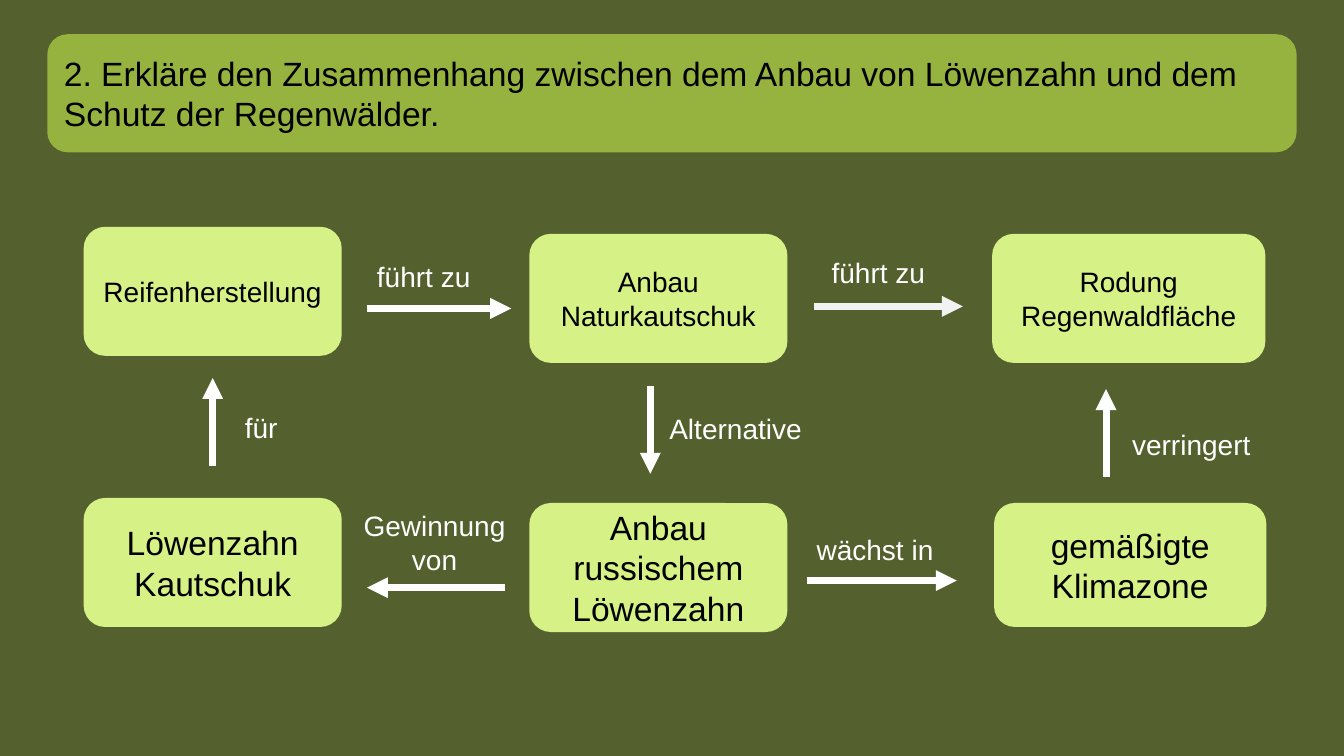
from dataclasses import dataclass

from lxml import etree
from pptx import Presentation
from pptx.dml.color import RGBColor
from pptx.enum import shapes, text
from pptx.oxml import ns
from pptx.util import Inches, Pt


@dataclass(frozen=True)
class Theme:
    background: str = "54612E"
    banner: str = "96B340"
    box: str = "D6F186"
    dark: str = "000000"
    light: str = "FFFFFF"
    pale: str = "F2F2F2"
    font: str = "Arial"
    small: int = 20
    large: int = 24
    arrow_width: float = 5
    banner_line: float = 1.5


THEME = Theme()
LEFT, CENTER = text.PP_ALIGN.LEFT, text.PP_ALIGN.CENTER


@dataclass(frozen=True)
class Box:
    words: str
    x: float
    y: float
    w: float = 2.56
    h: float = 1.28
    size: int = THEME.small
    side: float = 0.1
    fill: str = THEME.box
    align: text.PP_ALIGN = CENTER


@dataclass(frozen=True)
class Label:
    words: str
    x: float
    y: float
    w: float
    h: float = 0.44
    align: text.PP_ALIGN = LEFT


@dataclass(frozen=True)
class Arrow:
    x: float
    y: float
    dx: float = 0
    dy: float = 0
    color: str = THEME.light


COL_1, COL_2, COL_3 = 0.83, 5.25, 9.84
ROW_1, ROW_2 = 2.32, 4.99

BOXES = [
    Box("Reifenherstellung", COL_1, 2.25, side=0),
    Box("Anbau Naturkautschuk", COL_2, ROW_1),
    Box("Rodung Regenwaldfläche", COL_3, ROW_1, w=2.71),
    Box("Löwenzahn Kautschuk", COL_1, 4.94, size=THEME.large),
    Box("Anbau russischem Löwenzahn", COL_2, ROW_2, size=THEME.large, side=0),
    Box("gemäßigte Klimazone", 9.86, ROW_2, w=2.7, h=1.23, size=THEME.large),
]
BANNER = Box(
    "2. Erkläre den Zusammenhang zwischen dem Anbau von Löwenzahn "
    "und dem Schutz der Regenwälder.",
    0.48, 0.35, 12.37, 1.15, THEME.large, fill=THEME.banner, align=LEFT,
)
LABELS = [
    Label("führt zu", 3.64, 2.53, 1.22),
    Label("führt zu", 8.15, 2.49, 2.04),
    Label("für", 2.33, 4.02, 1.41),
    Label("Alternative", 6.54, 4.03, 2.04),
    Label("verringert", 11.13, 4.19, 1.54),
    Label("Gewinnung\nvon", 3.47, 5, 1.68, 0.77, CENTER),
    Label("wächst in", 8, 5.23, 1.72),
]
ARROWS = [
    Arrow(3.64, 3.06, dx=1.43),
    Arrow(8.07, 3.04, dx=1.48, color=THEME.pale),
    Arrow(2.11, 4.62, dy=-0.87),
    Arrow(6.45, 3.83, dy=0.87),
    Arrow(10.97, 4.73, dy=-0.87),
    Arrow(5.01, 5.83, dx=-1.37),
    Arrow(8, 5.76, dx=1.49),
]


def apply(target: object, values: dict) -> None:
    for name, value in values.items():
        setattr(target, name, value)


def rgb(value: str) -> RGBColor:
    return RGBColor.from_string(value)


def write(tf, words: str, size: int, color: str, align: text.PP_ALIGN) -> None:
    for i, line in enumerate(words.split("\n")):
        p = tf.add_paragraph() if i else tf.paragraphs[0]
        p.alignment = align
        r = p.add_run()
        r.text = line
        apply(r.font, {"name": THEME.font, "size": Pt(size)})
        r.font.color.rgb = rgb(color)


def draw_box(s, box: Box):
    sp = s.shapes.add_shape(
        shapes.MSO_SHAPE.ROUNDED_RECTANGLE,
        Inches(box.x), Inches(box.y), Inches(box.w), Inches(box.h),
    )
    sp.shadow.inherit = False
    sp.fill.solid()
    sp.fill.fore_color.rgb = rgb(box.fill)
    sp.line.fill.background()
    apply(sp.text_frame, {
        "word_wrap": True,
        "vertical_anchor": text.MSO_ANCHOR.MIDDLE,
        "margin_left": Inches(box.side),
        "margin_right": Inches(box.side),
    })
    write(sp.text_frame, box.words, box.size, THEME.dark, box.align)
    return sp


def draw_label(s, label: Label) -> None:
    sp = s.shapes.add_textbox(
        Inches(label.x), Inches(label.y), Inches(label.w), Inches(label.h)
    )
    apply(sp.text_frame, {
        "word_wrap": True,
        "auto_size": text.MSO_AUTO_SIZE.SHAPE_TO_FIT_TEXT,
    })
    write(sp.text_frame, label.words, THEME.small, THEME.light, label.align)


def draw_arrow(s, arrow: Arrow) -> None:
    sp = s.shapes.add_connector(
        shapes.MSO_CONNECTOR.STRAIGHT,
        Inches(arrow.x), Inches(arrow.y),
        Inches(arrow.x + arrow.dx), Inches(arrow.y + arrow.dy),
    )
    sp.line.color.rgb = rgb(arrow.color)
    sp.line.width = Pt(THEME.arrow_width)
    ln = sp.line._get_or_add_ln()
    etree.SubElement(ln, ns.qn("a:tailEnd"), type="triangle")
    etree.SubElement(ln.getparent(), ns.qn("a:effectLst"))


def main() -> None:
    prs = Presentation()
    apply(prs, {"slide_width": Inches(13.33), "slide_height": Inches(7.5)})
    s = prs.slides.add_slide(prs.slide_layouts[6])
    s.background.fill.solid()
    s.background.fill.fore_color.rgb = rgb(THEME.background)

    for box in BOXES:
        draw_box(s, box)
    for label in LABELS:
        draw_label(s, label)
    for arrow in ARROWS:
        draw_arrow(s, arrow)

    banner = draw_box(s, BANNER)
    banner.line.color.rgb = rgb(THEME.banner)
    banner.line.width = Pt(THEME.banner_line)

    prs.save("out.pptx")


if __name__ == "__main__":
    main()
